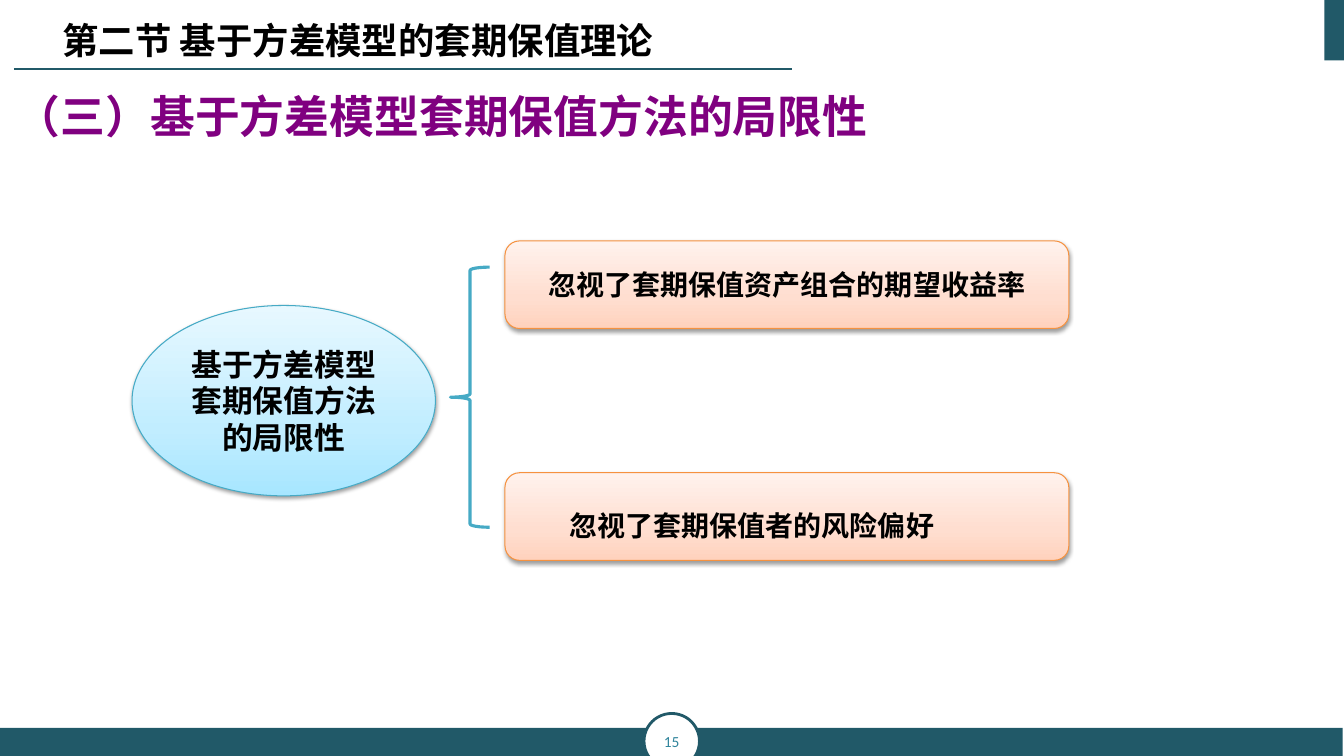
from dataclasses import dataclass

from lxml.etree import SubElement
from pptx import Presentation
from pptx.dml.color import RGBColor
from pptx.enum.shapes import MSO_CONNECTOR, MSO_SHAPE
from pptx.enum.text import MSO_ANCHOR, MSO_AUTO_SIZE, PP_ALIGN
from pptx.oxml.ns import qn
from pptx.util import Pt


@dataclass(frozen=True)
class Theme:
    """Colours, fonts and type sizes of the slide."""
    teal: str = "215968"
    number: str = "31859C"
    white: str = "FFFFFF"
    black: str = "000000"
    purple: str = "800080"
    blue_line: str = "46AAC5"
    orange_line: str = "F69240"
    blue_stops: tuple = ((0, "A7E6FF"), (35, "C1EDFF"), (100, "E7F8FF"))
    orange_stops: tuple = ((0, "FFD2BD"), (35, "FFDED0"), (100, "FFF2ED"))
    chinese: str = "Noto Sans CJK SC"
    sans: str = "Calibri"
    serif: str = "Times New Roman"
    section_size: int = 26
    heading_size: int = 32
    topic_size: int = 22
    limit_size: int = 20
    number_size: int = 11


THEME = Theme()


def rgb(value):
    """Turn a hex string into a colour."""
    return RGBColor.from_string(value)


def write(frame, text, size, font_name, color=THEME.black, bold=True,
          align=PP_ALIGN.CENTER, anchor=MSO_ANCHOR.MIDDLE):
    """Put one formatted paragraph in a text frame and return it."""
    frame.word_wrap = True
    frame.vertical_anchor = anchor
    paragraph = frame.paragraphs[0]
    paragraph.text = text
    paragraph.alignment = align
    font = paragraph.font
    font.size, font.bold, font.name = Pt(size), bold, font_name
    font.color.rgb = rgb(color)
    properties = paragraph._p.pPr.find(qn("a:defRPr"))
    SubElement(properties, qn("a:ea"), typeface=THEME.chinese)
    return paragraph


def add_shape(shapes, kind, box, fill=None, line=None, width=0.75):
    """Add a preset shape with a plain fill and outline."""
    shape = shapes.add_shape(kind, *map(Pt, box))
    shape.shadow.inherit = False
    if fill:
        shape.fill.solid()
        shape.fill.fore_color.rgb = rgb(fill)
    else:
        shape.fill.background()
    if line:
        shape.line.color.rgb = rgb(line)
        shape.line.width = Pt(width)
    else:
        shape.line.fill.background()
    return shape


def add_card(shapes, kind, box, stops, line):
    """Add a shape with an upward gradient and a soft shadow below."""
    card = add_shape(shapes, kind, box, line=line)
    card.fill.gradient()
    card.fill.gradient_angle = 90
    properties = card._element.spPr
    stop_list = properties.find(f".//{qn('a:gsLst')}")
    stop_list.clear()
    for position, color in stops:
        stop = SubElement(stop_list, qn("a:gs"), pos=str(position * 1000))
        SubElement(stop, qn("a:srgbClr"), val=color)
    shadow = SubElement(properties.find(qn("a:effectLst")), qn("a:outerShdw"),
                        blurRad=str(Pt(3.1)), dist=str(Pt(1.6)),
                        dir="5400000", rotWithShape="0")
    shade = SubElement(shadow, qn("a:srgbClr"), val=THEME.black)
    SubElement(shade, qn("a:alpha"), val="38000")
    return card


def add_rule(shapes, left, right, y):
    """Draw the thin line below the section title."""
    rule = shapes.add_connector(MSO_CONNECTOR.STRAIGHT, Pt(left), Pt(y), Pt(right), Pt(y))
    rule.line.color.rgb = rgb(THEME.teal)
    rule.line.width = Pt(1.5)
    SubElement(rule._element.spPr, qn("a:effectLst"))


def add_frame(shapes):
    """Draw the corner tab, footer band, page number and title rule."""
    add_shape(shapes, MSO_SHAPE.RECTANGLE, (946, 0, 14, 43.2), THEME.teal)
    add_shape(shapes, MSO_SHAPE.RECTANGLE, (0, 520, 959, 20), THEME.teal)
    badge = add_shape(shapes, MSO_SHAPE.OVAL, (460, 509.6, 39.6, 39.6),
                      THEME.white, THEME.teal, 2)
    write(badge.text_frame, "15", THEME.number_size, THEME.sans, THEME.number, bold=False)
    add_rule(shapes, 10, 566, 49)


def add_titles(shapes):
    """Fill the section title and the heading below it."""
    section = shapes.title
    section.left, section.top, section.width, section.height = map(Pt, (37.4, 9.4, 561.6, 38.9))
    write(section.text_frame, "第二节 基于方差模型的套期保值理论", THEME.section_size,
          THEME.chinese, align=PP_ALIGN.LEFT, anchor=MSO_ANCHOR.TOP)
    section.text_frame.auto_size = MSO_AUTO_SIZE.SHAPE_TO_FIT_TEXT
    heading = shapes.add_textbox(*map(Pt, (4.3, 59.8, 628.6, 46))).text_frame
    write(heading, "（三）基于方差模型套期保值方法的局限性", THEME.heading_size,
          THEME.chinese, THEME.purple, align=PP_ALIGN.LEFT, anchor=MSO_ANCHOR.TOP)
    heading.word_wrap = False
    heading.auto_size = MSO_AUTO_SIZE.SHAPE_TO_FIT_TEXT


def add_limit(shapes, top, text, align=PP_ALIGN.CENTER):
    """Add one limitation card and return its paragraph."""
    card = add_card(shapes, MSO_SHAPE.ROUNDED_RECTANGLE, (360.7, top, 402.8, 62.6),
                    THEME.orange_stops, THEME.orange_line)
    return write(card.text_frame, text, THEME.limit_size, THEME.serif, align=align)


def add_diagram(shapes):
    """Draw the topic, the brace and the two limitations as a group."""
    parts = shapes.add_group_shape().shapes
    topic = add_card(parts, MSO_SHAPE.OVAL, (94.3, 218.2, 216.7, 136),
                     THEME.blue_stops, THEME.blue_line)
    write(topic.text_frame, "基于方差模型套期保值方法的局限性", THEME.topic_size, THEME.sans)
    add_shape(parts, MSO_SHAPE.LEFT_BRACE, (321.8, 190.8, 28, 185.8),
              line=THEME.blue_line, width=2.25)
    add_limit(parts, 172.1, "忽视了套期保值资产组合的期望收益率")
    preference = add_limit(parts, 337.7, "忽视了套期保值者的风险偏好", PP_ALIGN.LEFT)
    preference.line_spacing = 1.5
    preference._p.pPr.set("indent", str(Pt(36)))


def main():
    """Build the slide and save it."""
    deck = Presentation()
    deck.slide_width, deck.slide_height = Pt(960), Pt(540)
    shapes = deck.slides.add_slide(deck.slide_layouts.get_by_name("Title Only")).shapes
    add_frame(shapes)
    add_titles(shapes)
    add_diagram(shapes)
    deck.save("out.pptx")


if __name__ == "__main__":
    main()
